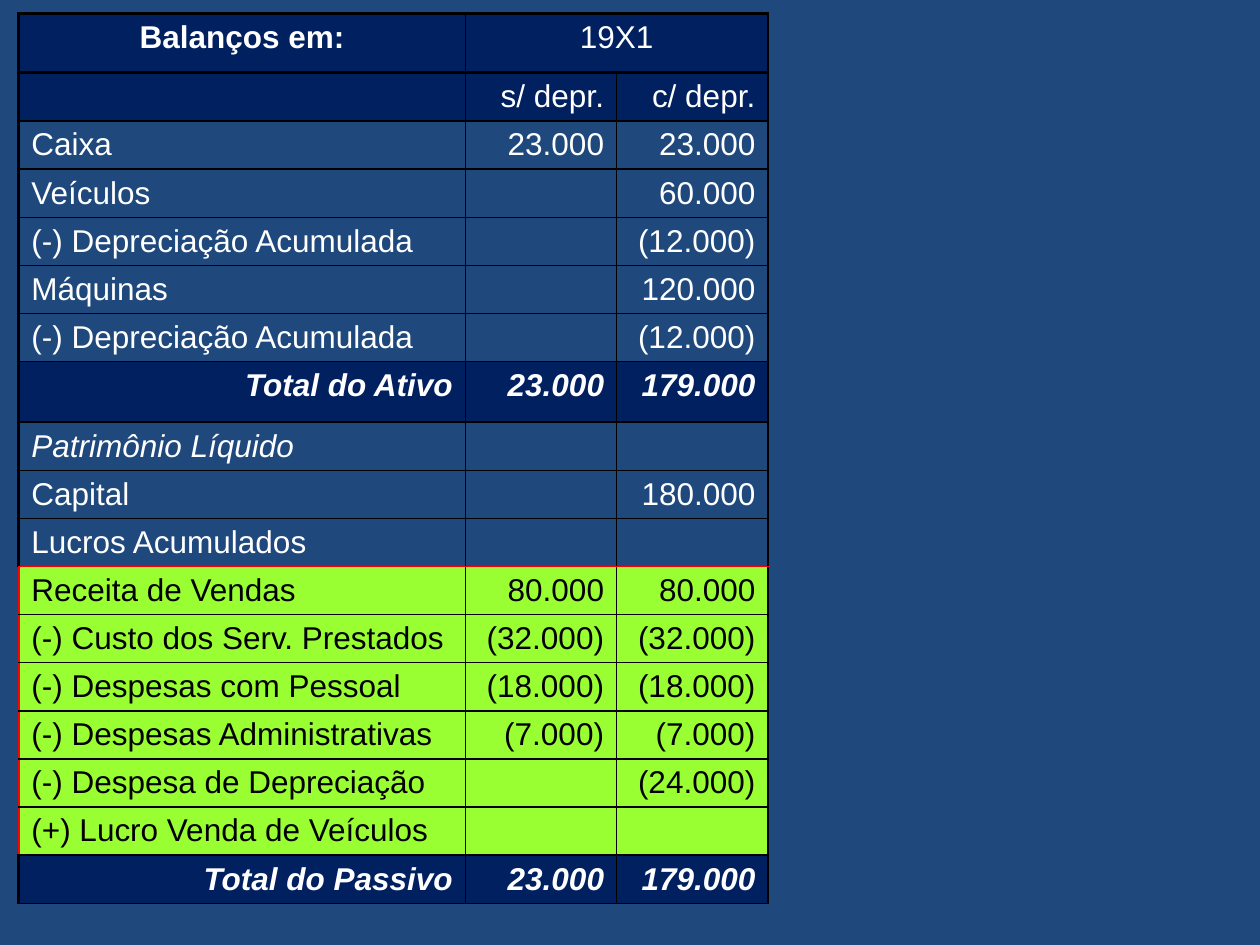
from lxml.etree import SubElement
from pptx import Presentation
from pptx.dml.color import RGBColor
from pptx.enum.text import PP_ALIGN
from pptx.oxml.ns import qn
from pptx.util import Cm, Pt

BACK = RGBColor(0x1F, 0x49, 0x7D)
NAVY = RGBColor(0x00, 0x20, 0x60)
LIME = RGBColor(0x99, 0xFF, 0x33)
WHITE = RGBColor(0xFF, 0xFF, 0xFF)
BLACK = RGBColor(0x00, 0x00, 0x00)
RED = RGBColor(0xFF, 0x00, 0x00)

# Row kind: fill, font colour, bold, italic
KINDS = {
    "head": (NAVY, WHITE, False, False),
    "plain": (None, WHITE, False, False),
    "group": (None, WHITE, False, True),
    "result": (LIME, BLACK, False, False),
    "total": (NAVY, WHITE, True, True),
}
ROWS = [
    ("head", "Balanços em:", "19X1", ""),
    ("head", "", "s/ depr.", "c/ depr."),
    ("plain", "Caixa", "23.000", "23.000"),
    ("plain", "Veículos", "", "60.000"),
    ("plain", "(-) Depreciação Acumulada", "", "(12.000)"),
    ("plain", "Máquinas", "", "120.000"),
    ("plain", "(-) Depreciação Acumulada", "", "(12.000)"),
    ("total", "Total do Ativo", "23.000", "179.000"),
    ("group", "Patrimônio Líquido", "", ""),
    ("plain", "Capital", "", "180.000"),
    ("plain", "Lucros Acumulados", "", ""),
    ("result", "Receita de Vendas", "80.000", "80.000"),
    ("result", "(-) Custo dos Serv. Prestados", "(32.000)", "(32.000)"),
    ("result", "(-) Despesas com Pessoal", "(18.000)", "(18.000)"),
    ("result", "(-) Despesas Administrativas", "(7.000)", "(7.000)"),
    ("result", "(-) Despesa de Depreciação", "", "(24.000)"),
    ("result", "(+) Lucro Venda de Veículos", "", ""),
    ("total", "Total do Passivo", "23.000", "179.000"),
]
WIDTHS = [Cm(9), Cm(3.05), Cm(3.05)]
HIGH = Cm(0.97)
TALL = {0: Cm(1.19), 7: Cm(1.22)}
FIRST = 11  # first row of the result block


def set_edge(cell, side, color, width):
    props = cell._tc.get_or_add_tcPr()
    line = SubElement(props, qn(f"a:ln{side}"), w=str(Pt(width)))
    fill = SubElement(line, qn("a:solidFill"))
    SubElement(fill, qn("a:srgbClr"), val=str(color))


def draw_edges(cell, row, col):
    lime = ROWS[row][0] == "result"
    left = (BLACK, 1)
    if col == 0:
        left = (RED, 1) if lime else (BLACK, 2)
    set_edge(cell, "L", *left)
    set_edge(cell, "R", BLACK, 1)
    set_edge(cell, "T", RED if row == FIRST else BLACK, 2 if row == 0 else 1)
    set_edge(cell, "B", RED if row == FIRST - 1 else BLACK, 2 if row == 0 else 1)


def get_align(kind, row, col):
    if row == 0:
        return PP_ALIGN.CENTER
    if col or kind == "total":
        return PP_ALIGN.RIGHT
    return PP_ALIGN.LEFT


def fill_cell(cell, row, col):
    kind, *texts = ROWS[row]
    fill, color, bold, slant = KINDS[kind]
    draw_edges(cell, row, col)
    if fill is None:
        cell.fill.background()
    else:
        cell.fill.solid()
        cell.fill.fore_color.rgb = fill
    cell.text = texts[col]
    para = cell.text_frame.paragraphs[0]
    para.alignment = get_align(kind, row, col)
    font = para.font
    font.name, font.size = "Arial", Pt(18)
    font.bold = bold or (row, col) == (0, 0)
    font.italic = slant
    font.color.rgb = color


def add_sheet(slide):
    heights = [TALL.get(i, HIGH) for i in range(len(ROWS))]
    frame = slide.shapes.add_table(len(ROWS), len(WIDTHS), Cm(0.38), Cm(0.28),
                                   sum(WIDTHS), sum(heights))
    table = frame.table
    table.first_row = table.horz_banding = False
    for col, width in zip(table.columns, WIDTHS):
        col.width = width
    for row, height in zip(table.rows, heights):
        row.height = height
    # The year spans both value columns
    table.cell(0, 1).merge(table.cell(0, 2))
    for row in range(len(ROWS)):
        for col in range(len(WIDTHS)):
            fill_cell(table.cell(row, col), row, col)


def main():
    deck = Presentation()
    deck.slide_width, deck.slide_height = Cm(25.4), Cm(19.05)
    slide = deck.slides.add_slide(deck.slide_layouts[6])
    # Background
    back = slide.background.fill
    back.solid()
    back.fore_color.rgb = BACK
    # Balance sheet
    add_sheet(slide)
    deck.save("out.pptx")


if __name__ == "__main__":
    main()
